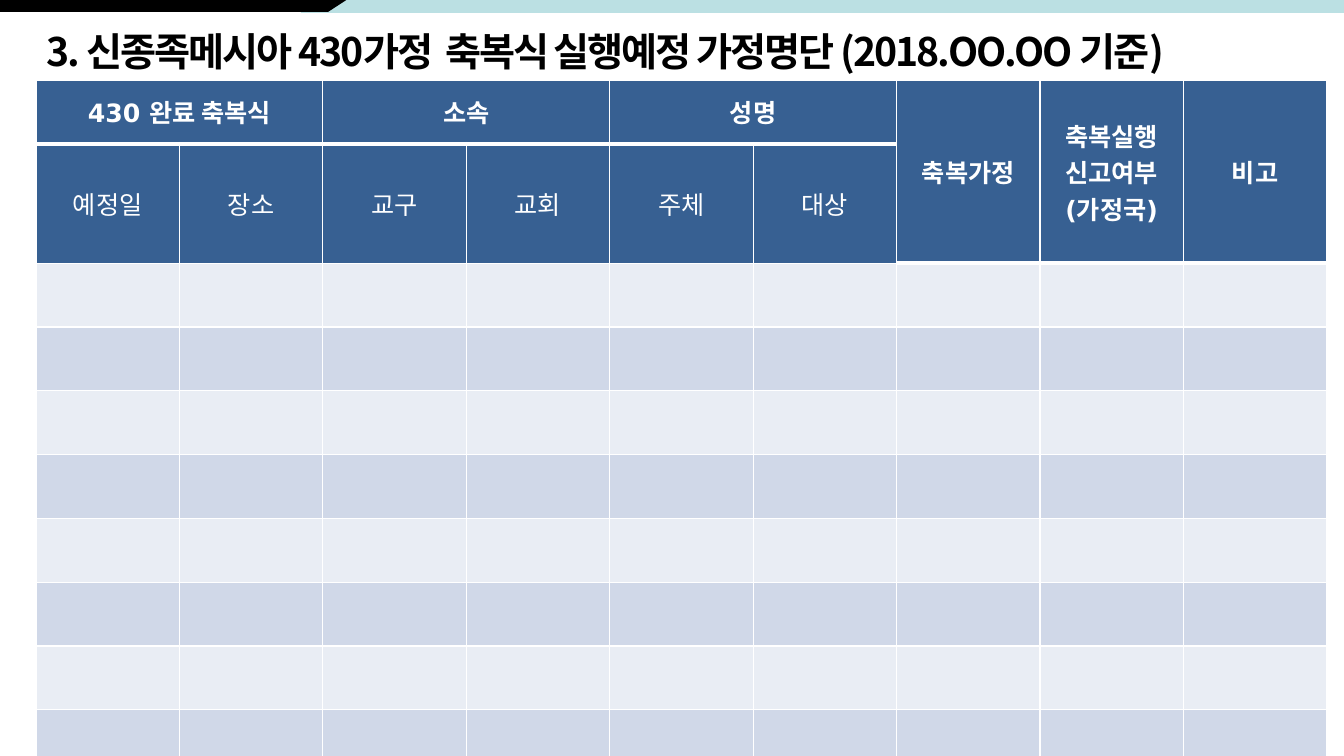
from lxml import etree
from pptx import Presentation
from pptx.dml.color import RGBColor
from pptx.enum.shapes import MSO_SHAPE
from pptx.enum.text import MSO_ANCHOR, MSO_AUTO_SIZE, PP_ALIGN
from pptx.oxml.ns import qn
from pptx.util import Inches, Pt

RECT = MSO_SHAPE.RECTANGLE
MIDDLE = MSO_ANCHOR.MIDDLE
NO_FIT = MSO_AUTO_SIZE.NONE
LEFT, CENTER = PP_ALIGN.LEFT, PP_ALIGN.CENTER

BLACK = RGBColor(0x00, 0x00, 0x00)
WHITE = RGBColor(0xFF, 0xFF, 0xFF)
GRAY = RGBColor(0x59, 0x59, 0x59)
AQUA = RGBColor(0xBB, 0xE0, 0xE3)
NAVY = RGBColor(0x37, 0x60, 0x92)
PALE = RGBColor(0xE9, 0xED, 0xF4)
MIST = RGBColor(0xD0, 0xD8, 0xE8)

LATIN, HANGUL = "DejaVu Sans", "Noto Sans CJK KR"
SCALE = Inches(1) / 100.8
TITLE = "3. 신종족메시아 430가정  축복식 실행예정 가정명단 (2018.OO.OO 기준)"
PAIRS = [
    ("430 완료 축복식", "예정일", "장소"),
    ("소속", "교구", "교회"),
    ("성명", "주체", "대상"),
]
TALL = [["축복가정"], ["축복실행", "신고여부", "(가정국)"], ["비고"]]
ROWS, COLS = 10, 9
SPLIT = 2 * len(PAIRS)  # first column whose header spans two rows


def emu(px):
    return round(px * SCALE)


def add_line(parent, tag, color, width):
    """Append a solid line element, width in points."""
    line = etree.SubElement(parent, qn(tag), w=str(Pt(width)))
    fill = etree.SubElement(line, qn("a:solidFill"))
    etree.SubElement(fill, qn("a:srgbClr"), val=str(color))
    return line


class Board:
    def __init__(self, deck):
        self.slide = deck.slides.add_slide(deck.slide_layouts[5])
        self.shapes = self.slide.shapes

    def paint(self, shape, color):
        shape.shadow.inherit = False
        shape.fill.solid()
        shape.fill.fore_color.rgb = color
        shape.line.fill.background()

    def rect(self, x, y, w, h, color):
        self.paint(self.shapes.add_shape(RECT, *map(emu, (x, y, w, h))), color)

    def shape(self, points, color):
        form = self.shapes.build_freeform(*points[0], scale=SCALE)
        form.add_line_segments(points[1:], close=True)
        self.paint(form.convert_to_shape(), color)

    def add_text(self, para, text, size, color, bold, face, align):
        para.alignment = align
        run = para.add_run()
        run.text = text
        font = run.font
        font.size, font.bold, font.name = Pt(size), bold, face
        font.color.rgb = color
        props = run._r.get_or_add_rPr()
        etree.SubElement(props, qn("a:ea"), typeface=HANGUL)
        return props

    def title(self, x, y, w, h, text):
        box = self.shapes.title
        box.left, box.top, box.width, box.height = map(emu, (x, y, w, h))
        frame = box.text_frame
        frame.word_wrap, frame.auto_size = True, NO_FIT
        frame.vertical_anchor = MIDDLE
        props = self.add_text(frame.paragraphs[0], text, 28, BLACK, True, HANGUL, LEFT)
        props.set("spc", "-150")
        props.insert(0, add_line(props, "a:ln", GRAY, 0.75))

    def grid(self, x, y, w, h):
        frame = self.shapes.add_table(ROWS, COLS, *map(emu, (x, y, w, h)))
        table = frame.table
        for row in range(ROWS):
            for col in range(COLS):
                self.cell(table.cell(row, col), row, col)
        return table

    def cell(self, cell, row, col):
        """Border and fill one cell; a thick rule closes each header."""
        last = 0 if col < SPLIT else 1
        cell.vertical_anchor = MIDDLE
        props = cell._tc.get_or_add_tcPr()
        sides = {
            "a:lnL": 1,
            "a:lnR": 1,
            "a:lnT": 3 if row == last + 1 else 1,
            "a:lnB": 3 if row in (0, last) else 1,
        }
        for tag, width in sides.items():
            add_line(props, tag, WHITE, width)
        cell.fill.solid()
        cell.fill.fore_color.rgb = NAVY if row < 2 else (PALE, MIST)[row % 2]

    def label(self, cell, lines, bold=True):
        frame = cell.text_frame
        for i, text in enumerate(lines):
            para = frame.add_paragraph() if i else frame.paragraphs[0]
            self.add_text(para, text, 18, WHITE, bold, LATIN, CENTER)


def main():
    deck = Presentation()
    deck.slide_width, deck.slide_height = emu(1344), emu(756)
    board = Board(deck)
    board.rect(301, 0, 1043, 13, AQUA)
    board.shape([(328, 12), (348, -1), (-1, -1), (-1, 12)], BLACK)
    board.title(36, 19, 1245, 64, TITLE)

    table = board.grid(36, 80, 1291, 638)
    for i, (head, *subs) in enumerate(PAIRS):
        col = 2 * i
        table.cell(0, col).merge(table.cell(0, col + 1))
        board.label(table.cell(0, col), [head])
        for j, sub in enumerate(subs):
            board.label(table.cell(1, col + j), [sub], bold=False)
    for col, lines in enumerate(TALL, SPLIT):
        table.cell(0, col).merge(table.cell(1, col))
        board.label(table.cell(0, col), lines)

    deck.save("out.pptx")


if __name__ == "__main__":
    main()
